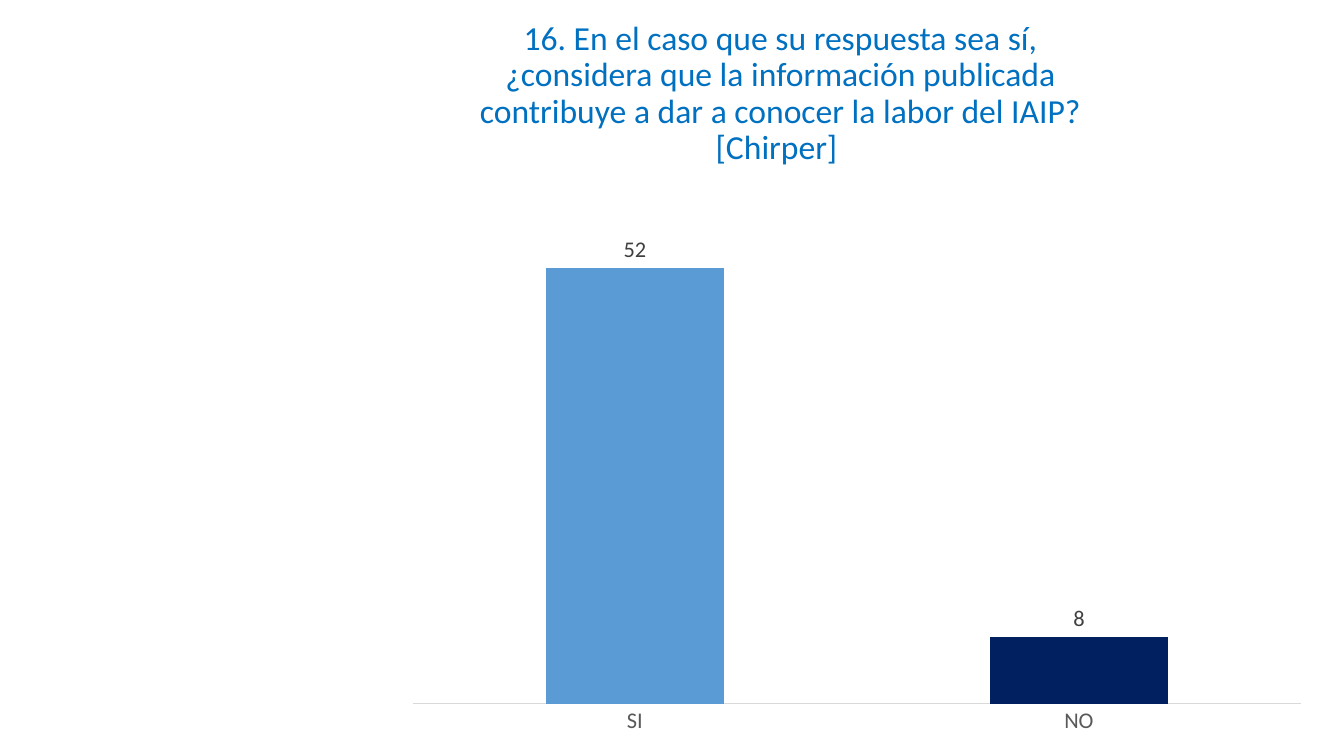
from dataclasses import dataclass

from lxml import etree
from pptx import Presentation
from pptx import util as u
from pptx.chart import data as cd
from pptx.dml.color import RGBColor
from pptx.enum import chart as ch, text
from pptx.oxml import ns


@dataclass(frozen=True)
class Theme:
    face: str = "Calibri"
    head: str = "0070C0"
    tick: str = "595959"
    label: str = "404040"
    line: str = "D9D9D9"
    bars: tuple = ("5B9BD5", "002060")
    big: int = 24
    small: int = 16


class Page:
    def __init__(self, deck, theme):
        self.theme = theme
        self.slide = deck.slides.add_slide(deck.slide_layouts[6])

    def style(self, font, size, color):
        font.name, font.size, font.bold = self.theme.face, u.Pt(size), False
        font.color.rgb = RGBColor.from_string(color)

    def title(self, words, *box):
        frame = self.slide.shapes.add_textbox(*map(u.Inches, box)).text_frame
        frame.word_wrap = True
        frame.vertical_anchor = text.MSO_ANCHOR.MIDDLE
        para = frame.paragraphs[0]
        para.text = words
        para.alignment = text.PP_ALIGN.CENTER
        para.line_spacing = 0.9
        self.style(para.runs[0].font, self.theme.big, self.theme.head)

    def columns(self, cats, vals, top, plot, *box):
        t = self.theme
        data = cd.CategoryChartData()
        data.categories = cats
        data.add_series("Series 1", vals)
        chart = self.slide.shapes.add_chart(
            ch.XL_CHART_TYPE.COLUMN_CLUSTERED, *map(u.Inches, box), data).chart
        chart.has_legend = chart.has_title = False
        self.style(chart.font, t.small, "000000")

        # Axes
        axis = chart.category_axis
        axis.major_tick_mark = ch.XL_TICK_MARK.NONE
        axis.format.line.color.rgb = RGBColor.from_string(t.line)
        axis.format.line.width = u.Pt(0.75)
        self.style(axis.tick_labels.font, t.small, t.tick)
        scale = chart.value_axis
        scale.minimum_scale, scale.maximum_scale = 0, top
        scale.has_major_gridlines = False
        scale.visible = False

        # Bars and their labels
        bars = chart.plots[0]
        bars.gap_width = 150
        bars.vary_by_categories = False
        series = bars.series[0]
        fills = [series.format.fill]
        fills += [series.points[i].format.fill for i in range(1, len(vals))]
        for fill, color in zip(fills, t.bars):
            fill.solid()
            fill.fore_color.rgb = RGBColor.from_string(color)
        labels = series.data_labels
        labels.show_value = True
        labels.position = ch.XL_LABEL_POSITION.OUTSIDE_END
        self.style(labels.font, t.small, t.label)
        self.place(chart, plot)

    def place(self, chart, plot):
        """Fix the inner plot area as fractions of the chart."""
        area = chart.plots[0]._element.getparent()
        for old in area.findall(ns.qn("c:layout")):
            area.remove(old)
        layout = etree.Element(ns.qn("c:layout"))
        area.insert(0, layout)
        manual = etree.SubElement(layout, ns.qn("c:manualLayout"))
        parts = [("layoutTarget", "inner"), ("xMode", "edge"), ("yMode", "edge")]
        for name, val in parts + list(zip("xywh", plot)):
            etree.SubElement(manual, ns.qn(f"c:{name}")).set("val", str(val))


def main():
    deck = Presentation()
    deck.slide_width, deck.slide_height = u.Inches(13.33), u.Inches(7.5)
    page = Page(deck, Theme())

    # Survey question
    page.title("16. En el caso que su respuesta sea sí, ¿considera que la "
               "información publicada contribuye a dar a conocer la labor "
               "del IAIP? [Chirper] ", 4.37, 0.32, 6.74, 1.23)

    # Answers
    page.columns(("SI", "NO"), (52, 8), 60, (0.04, 0.03, 0.94, 0.9),
                 3.72, 1.83, 9.37, 5.54)
    deck.save("out.pptx")


if __name__ == "__main__":
    main()
